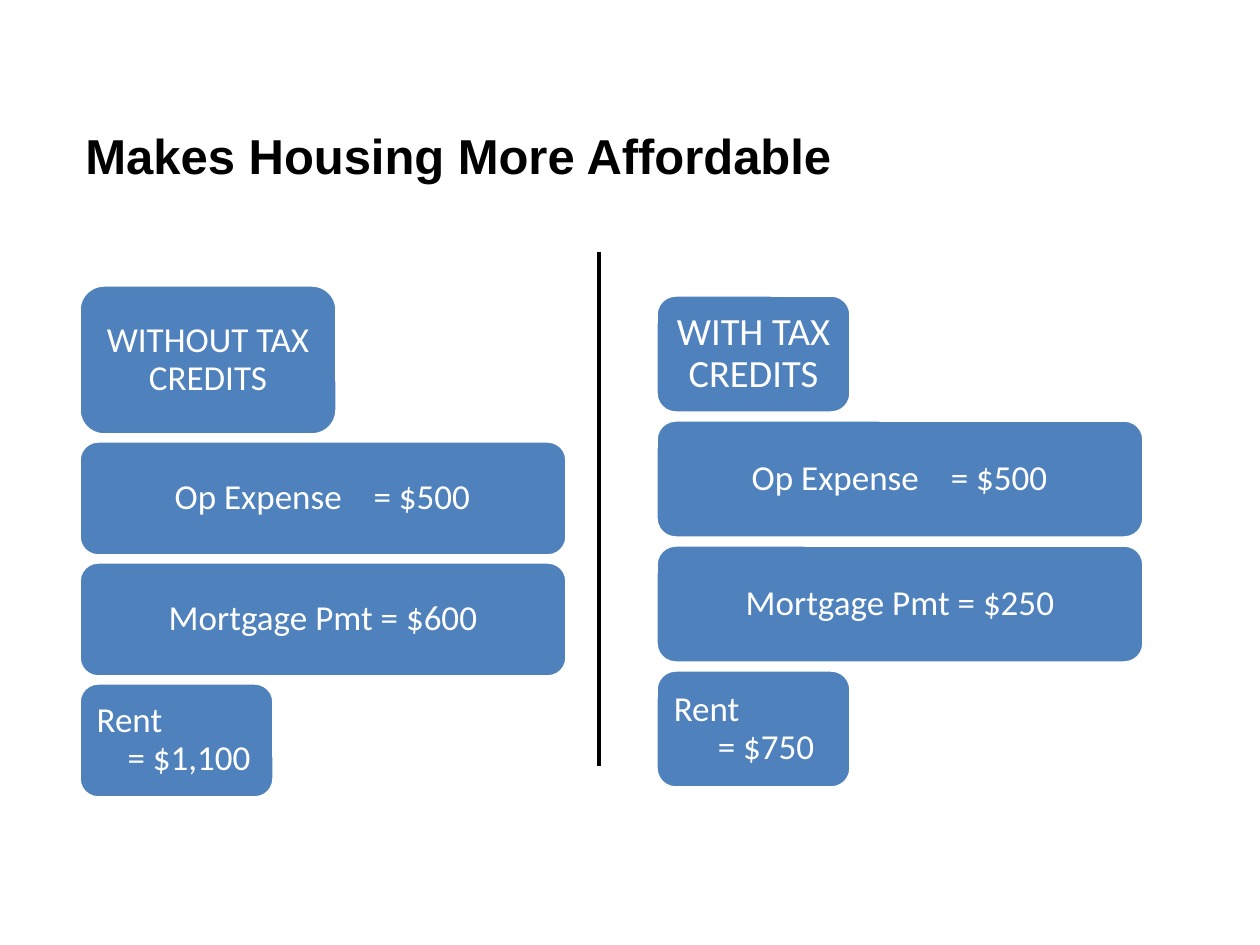
from lxml.etree import SubElement
from pptx import Presentation
from pptx.dml.color import RGBColor
from pptx.enum.shapes import MSO_CONNECTOR, MSO_SHAPE
from pptx.enum.text import MSO_ANCHOR, PP_ALIGN
from pptx.oxml.ns import qn
from pptx.util import Pt

EMU_PER_PX = 914400 / 126


def px(*lengths):
    """Turn pixel lengths into a list of EMU lengths."""
    return [round(length * EMU_PER_PX) for length in lengths]


def color(hex_value):
    return RGBColor.from_string(hex_value)


presentation = Presentation()
presentation.slide_width, presentation.slide_height = px(1260, 945)
slide = presentation.slides.add_slide(presentation.slide_layouts[6])

# Title
title = slide.shapes.add_textbox(*px(73, 84, 1116, 107))
title_frame = title.text_frame
title_frame.word_wrap = True
title_frame.vertical_anchor = MSO_ANCHOR.BOTTOM
title_frame.text = "Makes Housing More Affordable"
title_font = title_frame.paragraphs[0].runs[0].font
title_font.name, title_font.size, title_font.bold = "Arial", Pt(28), True
title_font.color.rgb = color("000000")

# Divider between the two cases
divider = slide.shapes.add_connector(MSO_CONNECTOR.STRAIGHT, *px(599, 252, 599, 766))
divider.line.color.rgb = color("000000")
divider.line.width = Pt(2.25)
SubElement(divider._element.spPr, qn("a:effectLst"))

# Each column: left, top, gap, cards
# Each card: text, width, height, font size, left inset, tab stop, hanging indent
CENTERED = (10, 0, 0)
EXPENSE = (90, 199, 0)
columns = [
    (79, 285, 6, [
        ("WITHOUT TAX CREDITS", 258, 150, 20, *CENTERED),
        ("Op Expense\t= $500", 488, 115, 20, *EXPENSE),
        ("Mortgage Pmt = $600", 488, 115, 20, *CENTERED),
        ("Rent\v= $1,100", 195, 115, 20, 12, 0, 31),
    ]),
    (656, 295, 7, [
        ("WITH TAX CREDITS", 195, 118, 22, *CENTERED),
        ("Op Expense\t= $500", 488, 118, 20, *EXPENSE),
        ("Mortgage Pmt = $250", 488, 118, 20, *CENTERED),
        ("Rent\v= $750", 195, 118, 20, 12, 0, 44),
    ]),
]

for left, top, gap, cards in columns:
    for text, width, height, size, inset, tab_stop, hanging in cards:
        card = slide.shapes.add_shape(
            MSO_SHAPE.ROUNDED_RECTANGLE, *px(left, top, width, height))
        card.shadow.inherit = False
        card.fill.solid()
        card.fill.fore_color.rgb = color("4F81BD")
        card.line.color.rgb = color("FFFFFF")
        card.line.width = Pt(2)

        frame = card.text_frame
        frame.word_wrap = True
        frame.vertical_anchor = MSO_ANCHOR.MIDDLE
        frame.margin_left, frame.margin_right = px(inset, 10)
        frame.margin_top = frame.margin_bottom = px(5)[0]
        frame.text = text.replace("\v", " ") if not hanging else ""
        paragraph = frame.paragraphs[0]
        paragraph.text = text
        paragraph.line_spacing = 0.9
        paragraph.alignment = PP_ALIGN.LEFT if tab_stop or hanging else PP_ALIGN.CENTER
        properties = paragraph._p.get_or_add_pPr()
        if hanging:
            indent = px(hanging)[0]
            properties.set("marL", str(indent))
            properties.set("indent", str(-indent))
        if tab_stop:
            tabs = SubElement(properties, qn("a:tabLst"))
            SubElement(tabs, qn("a:tab"), pos=str(px(tab_stop)[0]), algn="l")
        for run in paragraph.runs:
            run.font.name, run.font.size = "Calibri", Pt(size)
            run.font.color.rgb = color("FFFFFF")
        top += height + gap

presentation.save("out.pptx")
